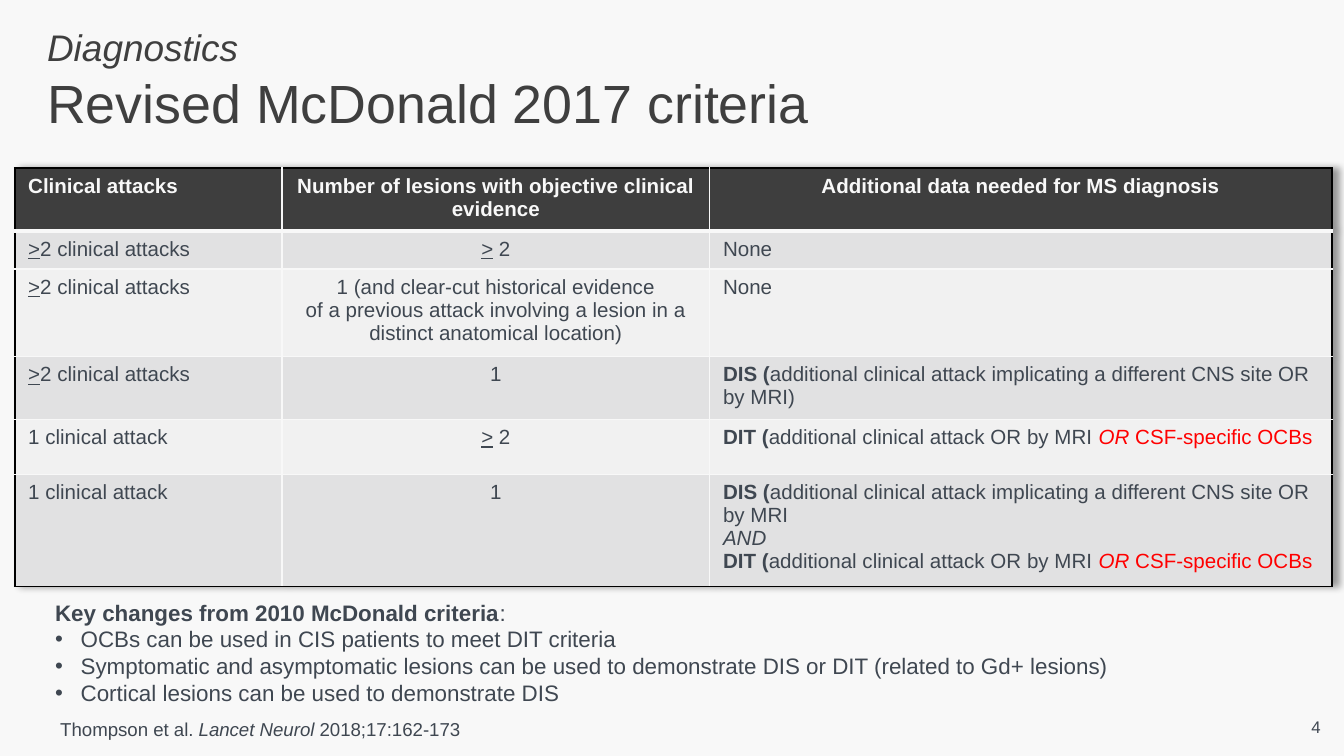
from lxml import etree
from pptx import Presentation
from pptx.dml.color import RGBColor
from pptx.enum.text import MSO_ANCHOR, MSO_AUTO_SIZE, PP_ALIGN
from pptx.oxml import parse_xml
from pptx.oxml.ns import nsdecls, qn
from pptx.util import Inches, Pt

LEFT, CENTER = PP_ALIGN.LEFT, PP_ALIGN.CENTER
MIDDLE = MSO_ANCHOR.MIDDLE
NO_FIT, GROW = MSO_AUTO_SIZE.NONE, MSO_AUTO_SIZE.SHAPE_TO_FIT_TEXT
WIDTH = Inches(10)
HEIGHT = WIDTH * 9 // 16
FONT = "Arial"
COLORS = {
    "paper": "F8F8F8", "title": "3F3F3F", "text": "3F4751", "header": "3E3E3E",
    "dark band": "E1E1E2", "light band": "F1F1F1", "frame": "000000", "new": "FF0000",
}

# A paragraph is a list of (text, marks); marks: b bold, i italic, u underlined, n new in 2017
TWO_ATTACKS = [[(">", "u"), ("2 clinical attacks", "")]]
ONE_ATTACK = [[("1 clinical attack", "")]]
TWO_LESIONS = [[(">", "u"), (" 2", "")]]
ONE_LESION = [[("1", "")]]
NONE_NEEDED = [[("None", "")]]
SITE = "additional clinical attack implicating a different CNS site OR by MRI"
DIT = [("DIT (", "b"), ("additional clinical attack OR by MRI ", ""),
       ("OR", "in"), (" CSF-specific OCBs", "n")]

CRITERIA = [
    [[[("Clinical attacks", "b")]],
     [[("Number of lesions with objective clinical evidence", "b")]],
     [[("Additional data needed for MS diagnosis", "b")]]],
    [TWO_ATTACKS, TWO_LESIONS, NONE_NEEDED],
    [TWO_ATTACKS,
     [[("1 (and clear-cut historical evidence", "")],
      [("of a previous attack involving a lesion in a distinct anatomical location)", "")]],
     NONE_NEEDED],
    [TWO_ATTACKS, ONE_LESION, [[("DIS (", "b"), (SITE + ")", "")]]],
    [ONE_ATTACK, TWO_LESIONS, [DIT]],
    [ONE_ATTACK, ONE_LESION, [[("DIS (", "b"), (SITE, "")], [("AND", "i")], DIT]],
]
COLUMN_WIDTHS = [1.99, 3.18, 4.63]
ROW_HEIGHTS = [0.44, 0.23] + [0.41] * 4

KEY_CHANGES = [
    [("Key changes from 2010 McDonald criteria", "b"), (":", "")],
    [("OCBs can be used in CIS patients to meet DIT criteria", "")],
    [("Symptomatic and asymptomatic lesions can be used to demonstrate "
      "DIS or DIT (related to Gd+ lesions)", "")],
    [("Cortical lesions can be used to demonstrate DIS", "")],
]
CITATION = [[("Thompson et al. ", ""), ("Lancet Neurol ", "i"), ("2018;17:162-173", "")]]


def rgb(name):
    return RGBColor.from_string(COLORS[name])


def area(left, top, width, height):
    """Turn percentages of the slide into lengths."""
    return (int(WIDTH * left / 100), int(HEIGHT * top / 100),
            int(WIDTH * width / 100), int(HEIGHT * height / 100))


def place(shape, box):
    shape.left, shape.top, shape.width, shape.height = box


def style(span, size, color, marks=""):
    font = span.font
    font.name, font.size = FONT, Pt(size)
    font.bold, font.italic = "b" in marks, "i" in marks
    font.underline = "u" in marks
    font.color.rgb = rgb("new" if "n" in marks else color)


def write(frame, paragraphs, size, color="text", align=LEFT):
    for index, spans in enumerate(paragraphs):
        para = frame.add_paragraph() if index else frame.paragraphs[0]
        para.alignment = align
        for text, marks in spans:
            span = para.add_run()
            span.text = text
            style(span, size, color, marks)


def add_title(page, box):
    title = page.shapes.title
    place(title, box)
    frame = title.text_frame
    frame.text = "Diagnostics\vRevised McDonald 2017 criteria"
    frame.auto_size, frame.vertical_anchor = NO_FIT, MIDDLE
    frame.margin_left = Inches(0.1)
    frame.margin_right = frame.margin_top = frame.margin_bottom = Inches(0.05)
    para = frame.paragraphs[0]
    para.alignment = LEFT
    topic, heading = para.runs
    style(topic, 19.8, "title", "i")
    style(heading, 28.8, "title")
    line_break = para._p.find(qn("a:br"))
    etree.SubElement(line_break, qn("a:rPr"), sz="2880")


def border(cell, side, color, points):
    line = parse_xml(
        f'<a:{side} {nsdecls("a")} w="{Pt(points)}"><a:solidFill>'
        f'<a:srgbClr val="{COLORS[color]}"/></a:solidFill></a:{side}>')
    cell._tc.get_or_add_tcPr().append(line)


def add_borders(cell, row, column):
    """Black around the table, pale inside, heavier below the header."""
    last_row, last_column = len(CRITERIA) - 1, len(COLUMN_WIDTHS) - 1
    sides = [("lnL", column == 0, 1), ("lnR", column == last_column, 1),
             ("lnT", row == 0, 3 if row == 1 else 1),
             ("lnB", row == last_row, 3 if row == 0 else 1)]
    for side, outer, points in sides:
        border(cell, side, "frame" if outer else "paper", points)


def add_criteria_table(page, box):
    table = page.shapes.add_table(len(CRITERIA), len(COLUMN_WIDTHS), *box).table
    table.horz_banding = False
    for column, width in zip(table.columns, COLUMN_WIDTHS):
        column.width = Inches(width)
    for row, height in zip(table.rows, ROW_HEIGHTS):
        row.height = Inches(height)
    for r, row in enumerate(CRITERIA):
        band = "header" if r == 0 else "dark band" if r % 2 else "light band"
        for c, paragraphs in enumerate(row):
            cell = table.cell(r, c)
            centred = c == 1 or (r == 0 and c == 2)
            write(cell.text_frame, paragraphs, 11, "text" if r else "paper",
                  CENTER if centred else LEFT)
            add_borders(cell, r, c)
            cell.fill.solid()
            cell.fill.fore_color.rgb = rgb(band)
    shadow = parse_xml(
        f'<a:effectLst {nsdecls("a")}><a:outerShdw blurRad="50800" dist="38100" '
        'dir="0" algn="l" rotWithShape="0"><a:prstClr val="black">'
        '<a:alpha val="40000"/></a:prstClr></a:outerShdw></a:effectLst>')
    table._tbl.tblPr.insert(0, shadow)


def add_key_changes(page, box):
    body = page.placeholders[1]
    place(body, box)
    frame = body.text_frame
    frame.auto_size = GROW
    write(frame, KEY_CHANGES, 12)
    for index, para in enumerate(frame.paragraphs):
        properties = para._p.get_or_add_pPr()
        indent = Inches(0.19) if index else 0
        properties.set("marL", str(indent))
        properties.set("indent", str(-indent))
        if index:
            etree.SubElement(properties, qn("a:buFont"), typeface=FONT)
            etree.SubElement(properties, qn("a:buChar"), char="•")
        else:
            etree.SubElement(properties, qn("a:buNone"))
        para.space_before = Pt(0)


def add_note(page, box, paragraphs, size):
    frame = page.shapes.add_textbox(*box).text_frame
    frame.word_wrap = True
    write(frame, paragraphs, size)
    return frame


def add_page_number(page, box):
    frame = add_note(page, box, [[("4", "")]], 9)
    frame.vertical_anchor, frame.margin_bottom = MIDDLE, 0


def main():
    deck = Presentation()
    deck.slide_width, deck.slide_height = WIDTH, HEIGHT
    page = deck.slides.add_slide(deck.slide_layouts[1])
    page.background.fill.solid()
    page.background.fill.fore_color.rgb = rgb("paper")
    add_title(page, area(2.5, 2.1, 92.5, 16.8))
    add_criteria_table(page, area(1.1, 22.25, 97.9, 55.3))
    add_page_number(page, area(96.6, 93.8, 4.3, 3.9))
    add_key_changes(page, area(3.1, 78.3, 93.8, 16.2))
    add_note(page, area(3.5, 94.1, 35, 4.8), CITATION, 10)
    deck.save("out.pptx")


if __name__ == "__main__":
    main()
